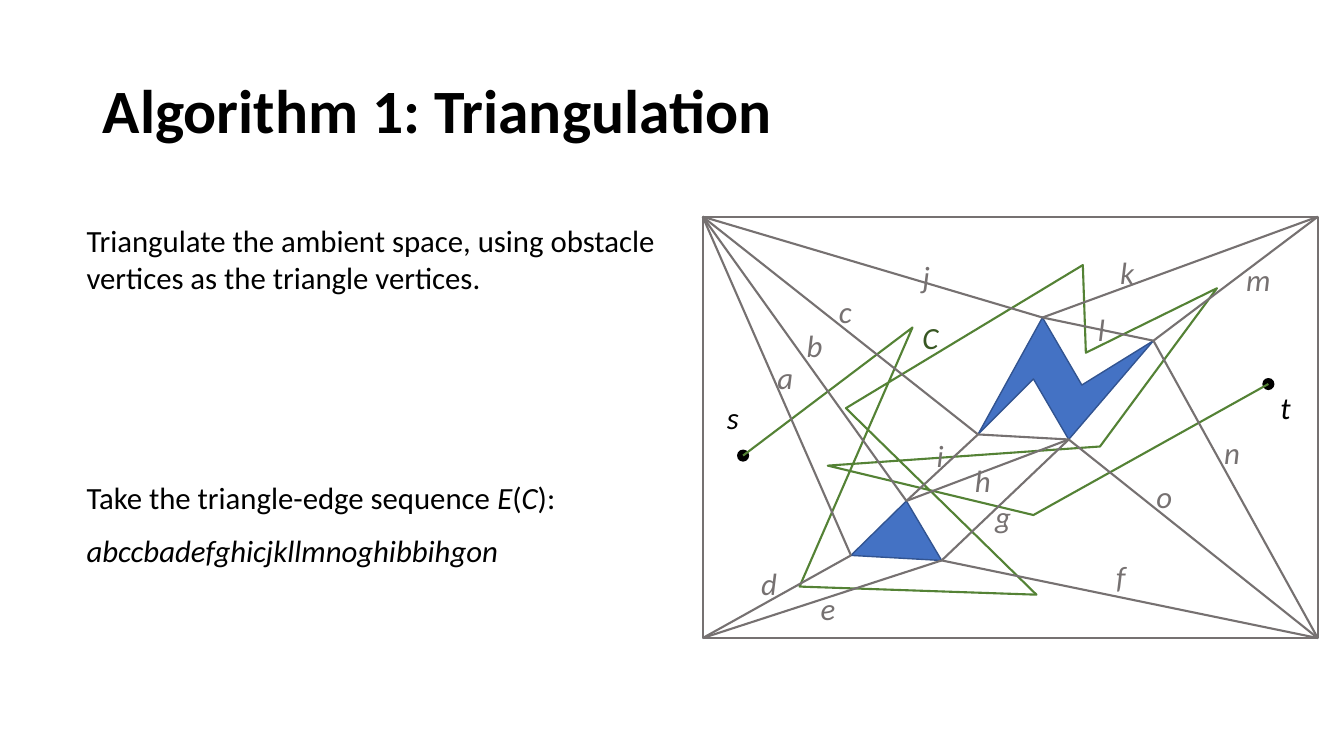
from lxml.etree import SubElement
from pptx import Presentation
from pptx.dml.color import RGBColor
from pptx.enum.shapes import MSO_CONNECTOR, MSO_SHAPE
from pptx.enum.text import MSO_ANCHOR, PP_ALIGN
from pptx.oxml.ns import qn
from pptx.util import Inches, Pt

FONT = "Calibri"
COLORS = {
    "text": "000000",
    "obstacle": "4472C4",
    "obstacle_line": "325491",
    "curve": "548235",
    "curve_label": "385723",
    "edge": "767171",
}
CORNERS = {"top_left": (0, 0), "top_right": (6.1, 0),
           "bottom_left": (0, 4.18), "bottom_right": (6.1, 4.18)}
ZIGZAG = {"z_notch": (3.76, 1.67), "z_right": (4.47, 1.23),
          "z_bottom": (3.63, 2.21), "z_inner": (3.28, 1.61),
          "z_left": (2.73, 2.16), "z_top": (3.37, 1)}
TRIANGLE = {"t_left": (1.47, 3.36), "t_right": (2.37, 3.41), "t_top": (2.02, 2.82)}
VERTICES = {**CORNERS, **ZIGZAG, **TRIANGLE}
EDGES = {
    "top_left": ["z_top", "z_left", "t_top", "t_left"],
    "top_right": ["z_right", "z_top"],
    "bottom_left": ["t_left", "t_right"],
    "bottom_right": ["t_right", "z_bottom", "z_right"],
    "z_bottom": ["t_top", "z_left", "t_right"],
    "z_top": ["z_right"],
    "z_left": ["t_top"],
}
CURVE = [(0.4, 2.37), (2.08, 1.1), (0.96, 3.67), (3.31, 3.75), (1.42, 1.9), (3.77, 0.48),
         (3.8, 1.35), (5.1, 0.71), (3.94, 2.28), (1.24, 2.47), (3.28, 2.96), (5.61, 1.66)]
EDGE_LABELS = {
    "a": (0.74, 1.41), "b": (1.03, 1.09), "c": (1.35, 0.75), "d": (0.58, 3.45),
    "e": (1.17, 3.7), "f": (4.1, 3.38), "g": (2.9, 2.79), "h": (2.7, 2.43),
    "i": (2.32, 2.18), "j": (2.18, 0.41), "k": (4.14, 0.37), "l": (3.92, 0.93),
    "m": (5.39, 0.44), "n": (5.17, 2.15), "o": (4.5, 2.59),
}


def rgb(name):
    return RGBColor.from_string(COLORS[name])


def format_run(r, size, color="text", bold=False, italic=False):
    r.font.name = FONT
    r.font.size = Pt(size)
    r.font.bold = bold
    r.font.italic = italic
    r.font.color.rgb = rgb(color)


def style_shape(sp, fill=None, line=None, width=1.5):
    sp.shadow.inherit = False
    if fill:
        sp.fill.solid()
        sp.fill.fore_color.rgb = rgb(fill)
    else:
        sp.fill.background()
    if line:
        sp.line.color.rgb = rgb(line)
        sp.line.width = Pt(width)
    else:
        sp.line.fill.background()


def add_text(s, box, runs, color="text", padded=True):
    sp = s.shapes.add_textbox(*map(Inches, box))
    tf = sp.text_frame
    tf.word_wrap = True
    if not padded:
        tf.margin_left = tf.margin_right = tf.margin_top = tf.margin_bottom = 0
    for text, italic in runs:
        r = tf.paragraphs[0].add_run()
        r.text = text
        format_run(r, 22, color, italic=italic)


def add_outline(s, points, closed):
    (x, y), *rest = [(Inches(px), Inches(py)) for px, py in points]
    builder = s.shapes.build_freeform(x, y)
    builder.add_line_segments(rest, close=closed)
    return builder.convert_to_shape()


def add_edge(s, start, end):
    line = s.shapes.add_connector(MSO_CONNECTOR.STRAIGHT, *map(Inches, start + end))
    line.line.color.rgb = rgb("edge")
    line.line.width = Pt(1.5)
    SubElement(line._element.spPr, qn("a:effectLst"))


def add_title(s, box):
    title = s.shapes.title
    title.left, title.top, title.width, title.height = map(Inches, box)
    tf = title.text_frame
    tf.text = "Algorithm 1: Triangulation"
    tf.vertical_anchor = MSO_ANCHOR.MIDDLE
    p = tf.paragraphs[0]
    p.alignment = PP_ALIGN.LEFT
    p.line_spacing = 0.9
    format_run(p.runs[0], 44, bold=True)


def add_explanation(s, box):
    left, top, width, height = box
    add_text(s, (left, top, width, 0.84),
             [("Triangulate the ambient space, using obstacle vertices "
               "as the triangle vertices.", False)])
    sequence_top = top + height - 1
    add_text(s, (left, sequence_top, 5.15, 0.47),
             [("Take the triangle-edge sequence ", False), ("E", True), ("(", False),
              ("C", True), ("):", False)])
    add_text(s, (left, sequence_top + 0.53, 5.15, 0.47),
             [("abccbadefghicjkllmnoghibbihgon", True)])


def add_triangulation(s, box):
    left, top, width, height = box

    def place(point):
        return left + point[0], top + point[1]

    for obstacle in (ZIGZAG, TRIANGLE):
        sp = add_outline(s, map(place, obstacle.values()), True)
        style_shape(sp, "obstacle", "obstacle_line", 1)

    dot = 0.12
    for point in (CURVE[0], CURVE[-1]):
        x, y = place(point)
        sp = s.shapes.add_shape(MSO_SHAPE.OVAL, Inches(x - dot / 2), Inches(y - dot / 2),
                                Inches(dot), Inches(dot))
        style_shape(sp, "text")
    style_shape(add_outline(s, map(place, CURVE), False), line="curve")

    frame = s.shapes.add_shape(MSO_SHAPE.RECTANGLE, *map(Inches, box))
    style_shape(frame, line="edge")
    for start, ends in EDGES.items():
        for end in ends:
            add_edge(s, place(VERTICES[start]), place(VERTICES[end]))

    add_text(s, (*place((0.24, 1.81)), 0.26, 0.37), [("s", True)], padded=False)
    add_text(s, (*place((5.63, 1.66)), 0.46, 0.68), [("t", True)])
    add_text(s, (*place((2.08, 0.96)), 0.45, 0.47), [("C", True)], "curve_label")
    for letter, point in EDGE_LABELS.items():
        add_text(s, (*place(point), 0.24, 0.37), [(letter, True)], "edge", padded=False)


def main():
    prs = Presentation()
    prs.slide_width = Inches(13.33)
    prs.slide_height = Inches(7.5)
    s = prs.slides.add_slide(prs.slide_layouts[5])
    add_title(s, (0.92, 0.4, 11.5, 1.45))
    add_explanation(s, (0.76, 2.15, 6.01, 3.55))
    add_triangulation(s, (6.97, 2.15, 6.1, 4.18))
    prs.save("out.pptx")


if __name__ == "__main__":
    main()
